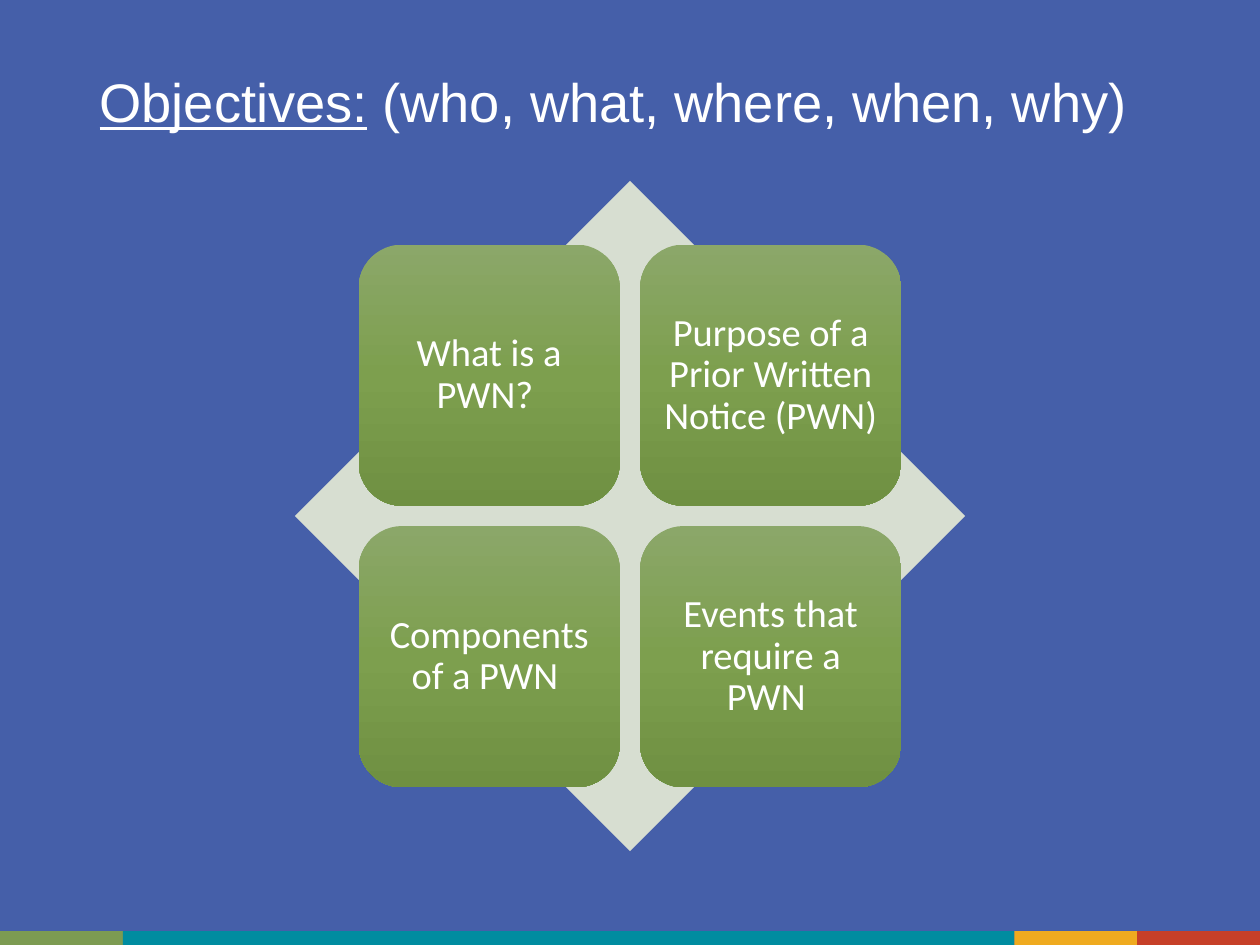
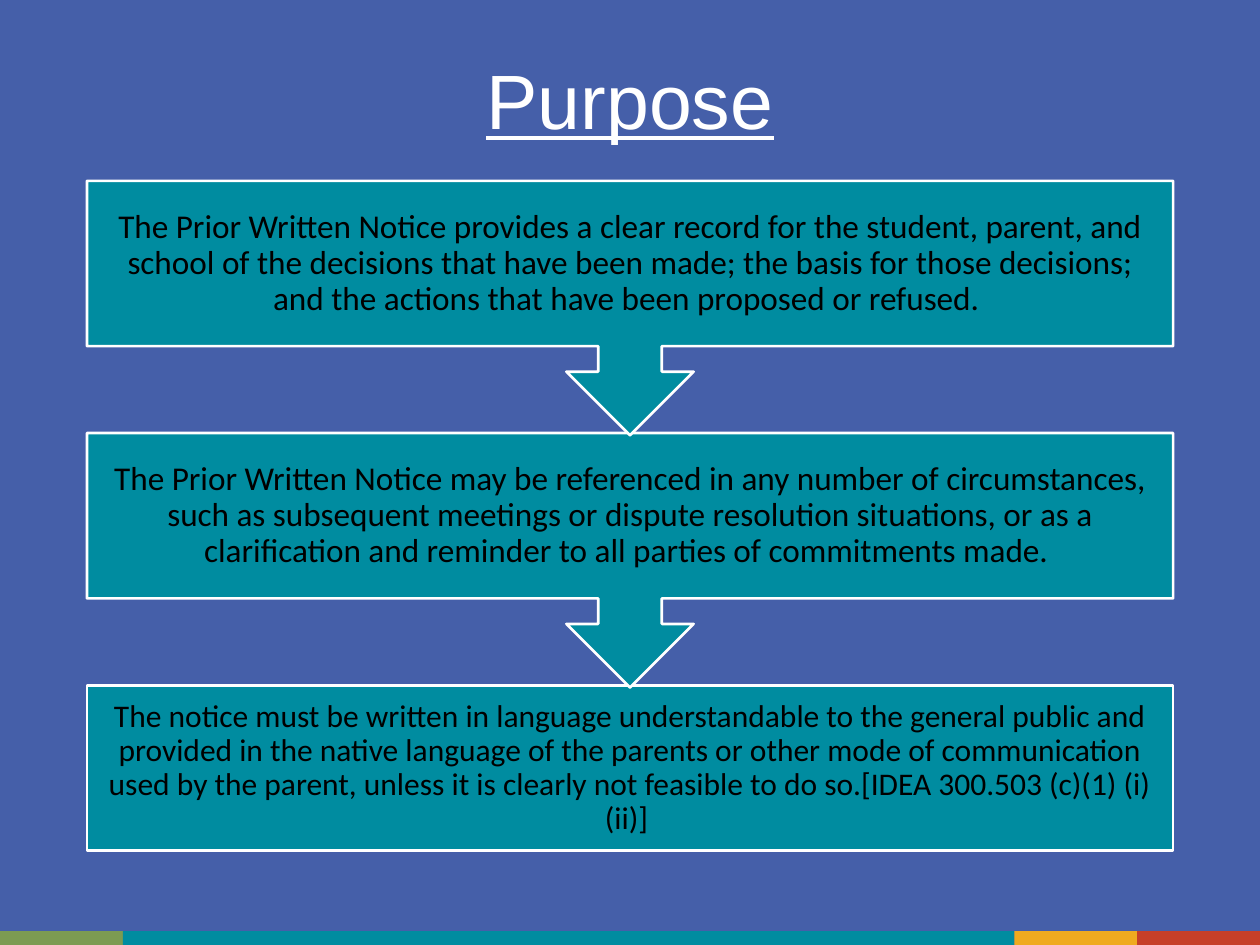
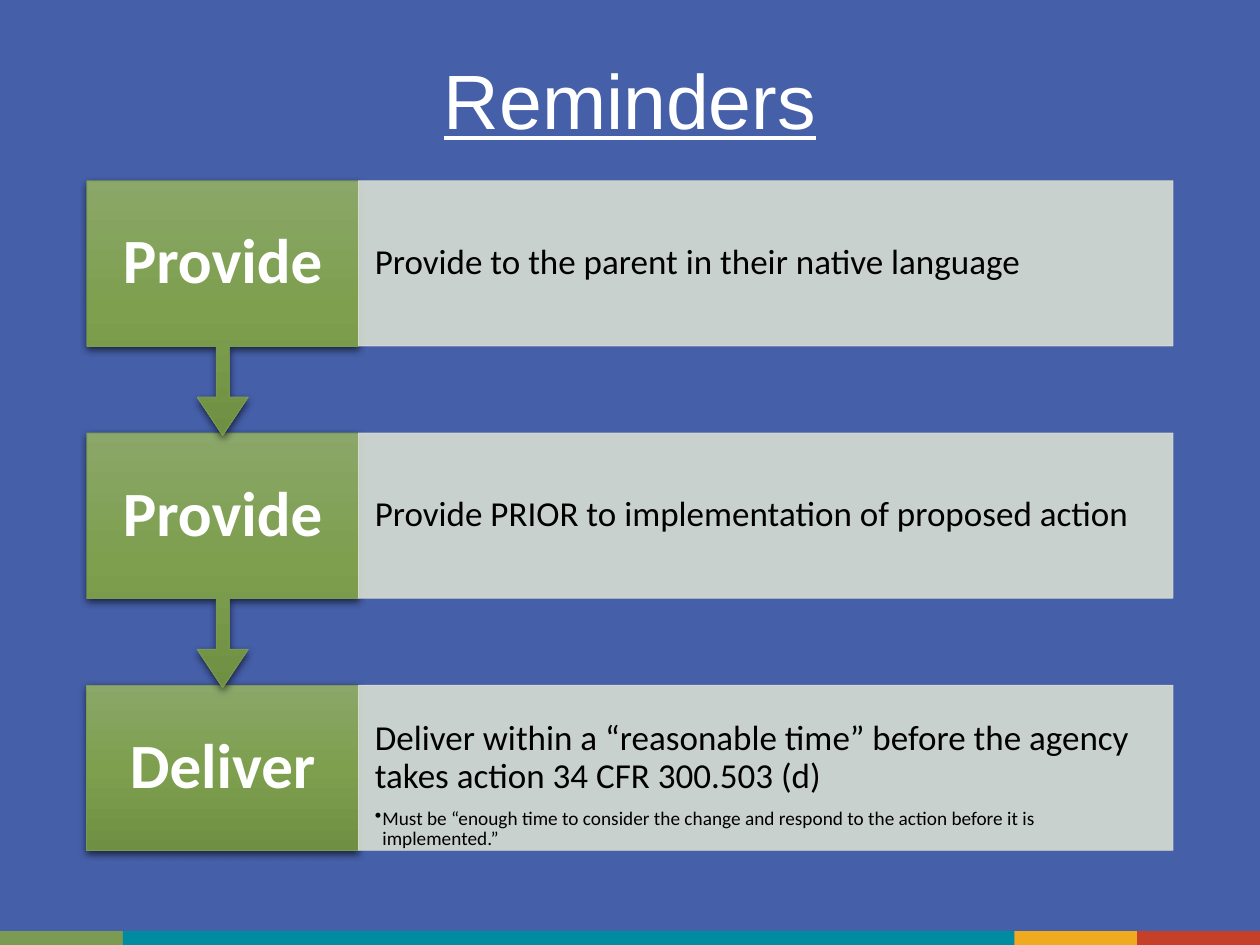
from copy import deepcopy

from lxml import etree
from pptx import Presentation
from pptx import util as u
from pptx.dml.color import RGBColor
from pptx.enum import shapes, text
from pptx.oxml.ns import qn

COLOURS = {
    "background": "455FA9", "green": "7C9B52", "teal": "008CA0",
    "amber": "EFAA1F", "red": "C63F28", "pale": "D7DED1",
    "white": "FFFFFF", "black": "000000",
    "light green": "8BA769", "mid green": "7D9F4E", "dark green": "6F9042",
}
GREEN_FADE = ("light green", "mid green", "dark green")
COLUMNS, ROWS = 100, 75
LEFT, WIDTH = 6.9, 86.2
STEP_TOP, STEP_PITCH, STEP_HEIGHT, CALLOUT_HEIGHT = 14.35, 20.02, 13.1, 20.2
SHAPE = shapes.MSO_SHAPE
CENTER, START = text.PP_ALIGN.CENTER, text.PP_ALIGN.LEFT


def rgb(name):
    return RGBColor.from_string(COLOURS[name])


def add_xml(parent, tag, **attributes):
    values = {key: str(value) for key, value in attributes.items()}
    return etree.SubElement(parent, qn(tag), values)


class Deck:
    """Holds the shared style and the slide being built."""

    def __init__(self):
        self.prs = Presentation()
        self.prs.slide_width, self.prs.slide_height = u.Inches(10), u.Inches(7.5)
        self.column = self.prs.slide_width / COLUMNS
        self.row = self.prs.slide_height / ROWS
        background = self.prs.slide_master.background.fill
        background.solid()
        background.fore_color.rgb = rgb("background")
        self.slide = None

    def box(self, left, top, width, height):
        """Turn grid columns and rows into slide lengths."""
        return (round(left * self.column), round(top * self.row),
                round(width * self.column), round(height * self.row))

    def start_slide(self, underlined, rest="", size=44, align=CENTER):
        self.slide = self.prs.slides.add_slide(self.prs.slide_layouts[5])
        self.bands()
        title = self.slide.shapes.title
        title.left, title.top, title.width, title.height = self.box(LEFT, 4, WIDTH, 8.6)
        frame = title.text_frame
        frame.vertical_anchor = text.MSO_ANCHOR.MIDDLE
        heading = frame.paragraphs[0]
        heading.alignment, heading.line_spacing = align, 0.9
        for words, line in ((underlined, True), (rest, False)):
            if words:
                run = heading.add_run()
                run.text = words
                self.font(run, size, "white", "Arial")
                run.font.underline = line

    def bands(self):
        left = 0
        for colour, width in (("green", 9.75), ("teal", 70.75),
                              ("amber", 9.75), ("red", 9.75)):
            self.shape(SHAPE.RECTANGLE, (left, 73.9, width, 1.1), colour)
            left += width

    def font(self, run, size, colour, name="Calibri", bold=False):
        run.font.name, run.font.size, run.font.bold = name, u.Pt(size), bold
        run.font.color.rgb = rgb(colour)

    def shape(self, kind, place, fill, line=None, line_width=0.5, alpha=None):
        """Draw a preset shape; three fill names make a top-down fade."""
        figure = self.slide.shapes.add_shape(kind, *self.box(*place))
        figure.shadow.inherit = False
        if isinstance(fill, tuple):
            self.fade(figure, fill)
        else:
            figure.fill.solid()
            figure.fill.fore_color.rgb = rgb(fill)
        if line:
            figure.line.color.rgb = rgb(line)
            figure.line.width = u.Pt(line_width)
        else:
            figure.line.fill.background()
        if alpha:
            for colour in figure.element.spPr.iter(qn("a:srgbClr")):
                add_xml(colour, "a:alpha", val=alpha * 1000)
        return figure

    def fade(self, figure, names):
        figure.fill.gradient()
        stop_list = figure.element.spPr.find(".//" + qn("a:gsLst"))
        stop_list.append(deepcopy(stop_list[-1]))
        for index, (stop, name) in enumerate(zip(figure.fill.gradient_stops, names)):
            stop.color.rgb = rgb(name)
            stop.position = index / (len(names) - 1)
        figure.fill.gradient_angle = 270

    def drop_shadow(self, figure):
        effects = figure.element.spPr.find(qn("a:effectLst"))
        shadow = add_xml(effects, "a:outerShdw", blurRad=u.Pt(4.5), dist=u.Pt(1.5),
                         dir=90 * 60000, algn="ctr", rotWithShape=0)
        colour = add_xml(shadow, "a:srgbClr", val=COLOURS["black"])
        add_xml(colour, "a:alpha", val=63000)

    def label(self, figure, words, size, colour="white", inset=(0.09, 0.09),
              align=CENTER, bold=False):
        frame = figure.text_frame
        frame.word_wrap = True
        frame.vertical_anchor = text.MSO_ANCHOR.MIDDLE
        frame.margin_left = frame.margin_right = u.Inches(inset[0])
        frame.margin_top = frame.margin_bottom = u.Inches(inset[1])
        frame.text = words
        self.paragraph(frame.paragraphs[0], size, colour, align, 0.35, bold)

    def paragraph(self, item, size, colour, align, after, bold=False):
        """Format a paragraph; after is a share of the text size."""
        item.alignment, item.line_spacing = align, 0.9
        item.space_after = u.Pt(round(after * size, 1))
        for run in item.runs:
            self.font(run, size, colour, bold=bold)

    def bullet(self, figure, words, size, colour):
        item = figure.text_frame.add_paragraph()
        item.text, item.level = words, 1
        self.paragraph(item, size, colour, START, 0.15)
        properties = item._p.get_or_add_pPr()
        properties.set("marL", str(u.Inches(0.06)))
        properties.set("indent", str(-u.Inches(0.06)))
        add_xml(properties, "a:buChar", char="•")

    def step(self, index, last, left, width, fill, line, line_width):
        """Draw one step of a downward process; all but the last carry an arrow."""
        kind = SHAPE.RECTANGLE if last else SHAPE.DOWN_ARROW_CALLOUT
        height = STEP_HEIGHT if last else CALLOUT_HEIGHT
        place = (left, STEP_TOP + index * STEP_PITCH, width, height)
        return self.shape(kind, place, fill, line, line_width)


def objectives(deck):
    deck.start_slide("Objectives:", " (who, what, where, when, why)", 31, START)
    middle_x, middle_y, diamond, tile, gap = 50, 40.95, 53.2, 20.74, 1.6
    deck.shape(SHAPE.DIAMOND, (middle_x - diamond / 2, middle_y - diamond / 2,
                               diamond, diamond), "pale")
    topics = ("What is a PWN? ", "Purpose of a Prior Written Notice (PWN)",
              "Components of a PWN ", "Events that require a PWN ")
    for index, topic in enumerate(topics):
        down, across = divmod(index, 2)
        left = middle_x - gap / 2 - tile + across * (tile + gap)
        top = middle_y - gap / 2 - tile + down * (tile + gap)
        card = deck.shape(SHAPE.ROUNDED_RECTANGLE, (left, top, tile, tile), GREEN_FADE)
        deck.label(card, topic, 22)


def purpose(deck):
    deck.start_slide("Purpose")
    reasons = (
        ("The Prior Written Notice provides a clear record for the student, parent, "
         "and school of the decisions that have been made; the basis for those "
         "decisions; and the actions that have been proposed or refused. ", 19, 0.15),
        ("The Prior Written Notice may be referenced in any number of circumstances, "
         "such as subsequent meetings or dispute resolution situations, or as a "
         "clarification and reminder to all parties of commitments made. ", 19, 0.15),
        ("The notice must be written in language understandable to the general public "
         "and provided in the native language of the parents or other mode of "
         "communication used by the parent, unless it is clearly not feasible to do "
         "so.[IDEA 300.503 (c)(1) (i)(ii)] ", 18, 0.14),
    )
    final = len(reasons) - 1
    for index, (reason, size, inset) in reversed(list(enumerate(reasons))):
        panel = deck.step(index, index == final, LEFT, WIDTH, "teal", "white", 1.5)
        deck.label(panel, reason, size, "black", (inset, inset))


def reminders(deck):
    deck.start_slide("Reminders")
    actions = (
        ("Provide", "Provide to the parent in their native language"),
        ("Provide", "Provide PRIOR to implementation of proposed action"),
        ("Deliver", "Deliver within a “reasonable time” before the "
                    "agency takes action 34 CFR 300.503 (d)"),
    )
    verb_width, final = 21.55, len(actions) - 1
    for index, (verb, detail) in reversed(list(enumerate(actions))):
        heading = deck.step(index, index == final, LEFT, verb_width,
                            GREEN_FADE, "green", 0.5)
        if index < final:
            for slot, share in enumerate((0.05, 0.1, 0.15, 0.65)):
                heading.adjustments[slot] = share
        deck.drop_shadow(heading)
        deck.label(heading, verb, 36, inset=(0.15, 0.28), bold=True)

        panel = deck.shape(SHAPE.RECTANGLE,
                           (LEFT + verb_width, STEP_TOP + index * STEP_PITCH,
                            WIDTH - verb_width, STEP_HEIGHT),
                           "pale", "pale", alpha=90)
        deck.label(panel, detail, 20, "black", (0.13, 0.28), START)
        if index == final:
            panel.text_frame.vertical_anchor = text.MSO_ANCHOR.TOP
            deck.bullet(panel, "Must be “enough time to consider the change and respond "
                               "to the action before it is implemented.” ", 11, "black")


def main():
    deck = Deck()
    for build in (objectives, purpose, reminders):
        build(deck)
    deck.prs.save("out.pptx")


if __name__ == "__main__":
    main()
